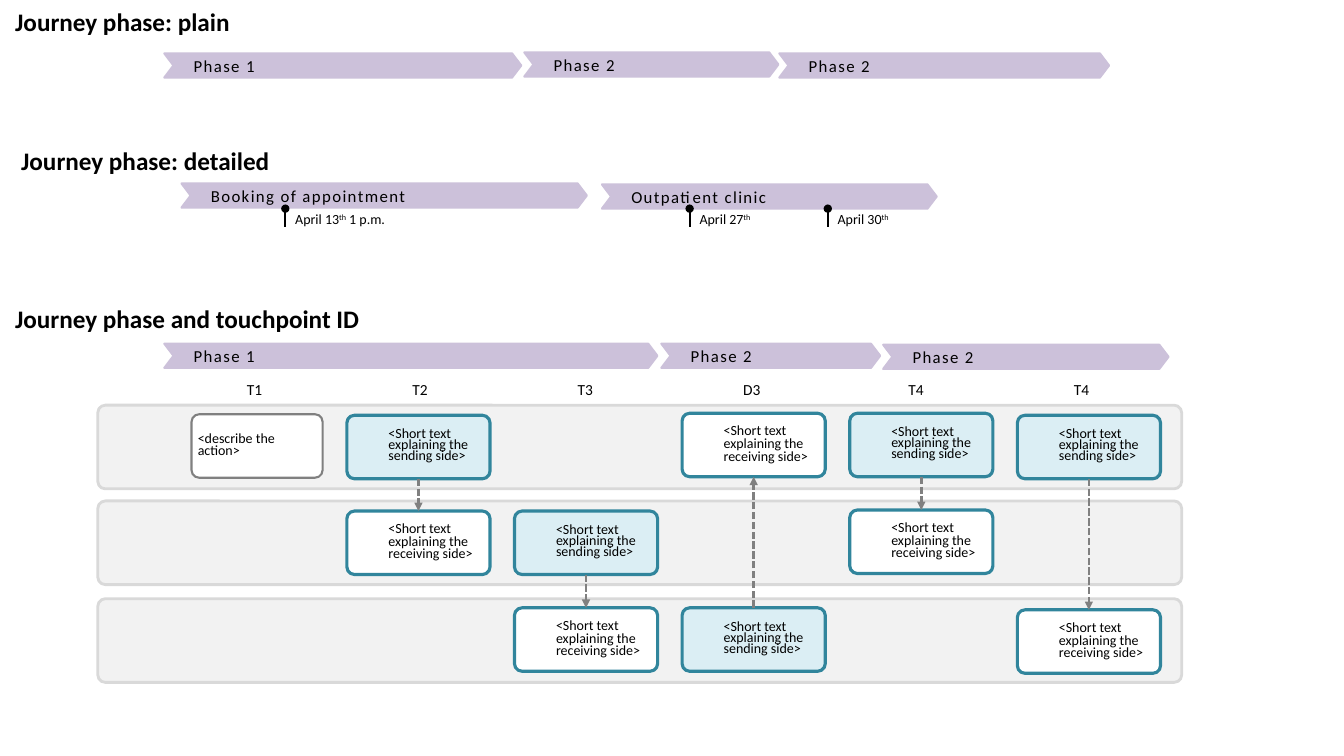
from lxml import etree
from pptx import Presentation
from pptx.dml.color import RGBColor
from pptx.enum.dml import MSO_LINE
from pptx.enum.shapes import MSO_CONNECTOR, MSO_SHAPE
from pptx.enum.text import MSO_ANCHOR, MSO_AUTO_SIZE, PP_ALIGN
from pptx.oxml.ns import qn
from pptx.util import Inches, Pt

ROUND = MSO_SHAPE.ROUNDED_RECTANGLE
CHEVRON = MSO_SHAPE.CHEVRON
STRAIGHT = MSO_CONNECTOR.STRAIGHT
DASH = MSO_LINE.SQUARE_DOT
TOP = MSO_ANCHOR.TOP
MIDDLE = MSO_ANCHOR.MIDDLE
LEFT = PP_ALIGN.LEFT
GROW = MSO_AUTO_SIZE.SHAPE_TO_FIT_TEXT
FIXED = MSO_AUTO_SIZE.NONE

HEX = {
    "black": "000000",
    "white": "FFFFFF",
    "lane": "F2F2F2",
    "edge": "D9D9D9",
    "teal": "31859C",
    "pale": "DBEEF4",
    "gray": "808080",
    "phase": "CCC1DA",
}
FONT = "Calibri"
SEND = "<Short text explaining the sending side>"
RECEIVE = "<Short text explaining the receiving side>"


def color(name):
    return RGBColor.from_string(HEX[name])


def write(frame, text, size=10, bold=False, pad=(0, 0, 0, 0),
          anchor=TOP, fit=FIXED, lead=None, space=0, raised=""):
    frame.word_wrap = True
    frame.auto_size = fit
    frame.vertical_anchor = anchor
    (frame.margin_left, frame.margin_top,
     frame.margin_right, frame.margin_bottom) = map(Inches, pad)
    para = frame.paragraphs[0]
    para.alignment = LEFT
    if lead:
        para.line_spacing = Pt(lead)
    before, mark, after = text.partition(raised) if raised else (text, "", "")
    for part in filter(None, (before, mark, after)):
        run = para.add_run()
        run.text = part
        run.font.name = FONT
        run.font.size = Pt(size)
        run.font.bold = bold
        run.font.color.rgb = color("black")
        props = run.font._element
        if space:
            props.set("spc", str(space * 100))
        if raised and part == mark:
            props.set("baseline", "30000")


class Journey:
    def __init__(self, slide):
        self.slide = slide
        self.shapes = slide.shapes

    def title(self, text, left, top):
        box = self.shapes.title
        box.left, box.top = Inches(left), Inches(top)
        box.width, box.height = Inches(3.94), Inches(0.3)
        write(box.text_frame, text, size=18, bold=True, fit=GROW)

    def label(self, text, left, top, width, height, **style):
        box = self.shapes.add_textbox(*map(Inches, (left, top, width, height)))
        write(box.text_frame, text, fit=GROW, **style)

    def block(self, kind, left, top, width, height, curve, fill, edge, weight):
        shape = self.shapes.add_shape(kind, *map(Inches, (left, top, width, height)))
        shape.adjustments[0] = curve
        shape.shadow.inherit = False
        shape.fill.solid()
        shape.fill.fore_color.rgb = color(fill)
        shape.line.color.rgb = color(edge)
        shape.line.width = Pt(weight)
        return shape

    def lane(self, top):
        self.block(ROUND, 0.97, top, 10.75, 0.83, 0.09, "lane", "edge", 2)

    def phase(self, text, left, top, width):
        shape = self.block(CHEVRON, left, top, width, 0.24, 0.38, "phase", "phase", 1.5)
        write(shape.text_frame, text, size=12, pad=(0.2, 0, 0, 0), anchor=MIDDLE, space=1)

    def touch(self, text, left, top, fill, lead):
        shape = self.block(ROUND, left, top, 1.42, 0.63, 0.12, fill, "teal", 2.25)
        write(shape.text_frame, text, pad=(0.39, 0, 0.04, 0), anchor=MIDDLE, lead=lead)
        return shape

    def action(self, text, left, top):
        shape = self.block(ROUND, left, top, 1.3, 0.63, 0.12, "white", "gray", 1.5)
        write(shape.text_frame, text, pad=(0.04, 0, 0.04, 0), anchor=MIDDLE, lead=9)

    def line(self, start, end, ink, weight, head, dash=None):
        link = self.shapes.add_connector(STRAIGHT, *map(Inches, start + end))
        link.line.color.rgb = color(ink)
        link.line.width = Pt(weight)
        if dash:
            link.line.dash_style = dash
        props = link._element.spPr
        etree.SubElement(props.find(qn("a:ln")), qn("a:tailEnd"), type=head)
        etree.SubElement(props, qn("a:effectLst"))
        return link

    def date(self, text, left, width):
        self.line((left, 2.25), (left, 2.07), "black", 1.5, "oval")
        self.label(text, left, 2.04, width, 0.27, pad=(0.1, 0.05, 0.1, 0.05), raised="th")

    def message(self, left, sent, got):
        target = self.touch(RECEIVE, left, got, "white", 9)
        source = self.touch(SEND, left, sent, "pale", 8)
        mid = left + 0.71
        down = sent < got
        start = sent + 0.63 if down else sent
        end = got if down else got + 0.63
        link = self.line((mid, start), (mid, end), "gray", 1.75, "triangle", DASH)
        link.begin_connect(source, 2 if down else 0)
        link.end_connect(target, 0 if down else 2)


def main():
    deck = Presentation()
    deck.slide_width, deck.slide_height = Inches(13.33), Inches(7.5)
    page = Journey(deck.slides.add_slide(deck.slide_layouts[5]))

    page.title("Journey phase: plain", 0.15, 0.06)
    for text, left, top in (
        ("Journey phase: detailed", 0.21, 1.44),
        ("Journey phase and touchpoint ID", 0.15, 3.01),
    ):
        page.label(text, left, top, 3.94, 0.3, size=18, bold=True)

    for top in (4.02, 4.97, 5.94):
        page.lane(top)

    for col, name in enumerate(("T1", "T2", "T3", "D3", "T4", "T4")):
        page.label(name, 2.45 + 1.64 * col, 3.77, 0.2, 0.19, size=11)

    page.action("<describe the action>", 1.9, 4.11)
    trips = ((4.12, 5.07), (5.07, 6.03), (6.03, 4.1), (4.1, 5.06), (4.12, 6.05))
    pitch = 6.65 / (len(trips) - 1)
    for col, (sent, got) in enumerate(trips):
        page.message(3.44 + pitch * col, sent, got)

    for text, left, top, width in (
        ("Phase 1", 1.63, 0.53, 3.54),
        ("Phase 2", 5.2, 0.52, 2.52),
        ("Phase 2", 7.73, 0.53, 3.27),
        ("Booking of appointment", 1.8, 1.82, 4.02),
        ("Outpatient clinic", 5.97, 1.83, 3.32),
        ("Phase 1", 1.63, 3.41, 4.89),
        ("Phase 2", 6.56, 3.41, 2.17),
        ("Phase 2", 8.76, 3.42, 2.83),
    ):
        page.phase(text, left, top, width)

    for text, left, width in (
        ("April 13th 1 p.m.", 2.83, 1.2),
        ("April 27th", 6.84, 0.77),
        ("April 30th", 8.21, 0.77),
    ):
        page.date(text, left, width)

    deck.save("out.pptx")


if __name__ == "__main__":
    main()
